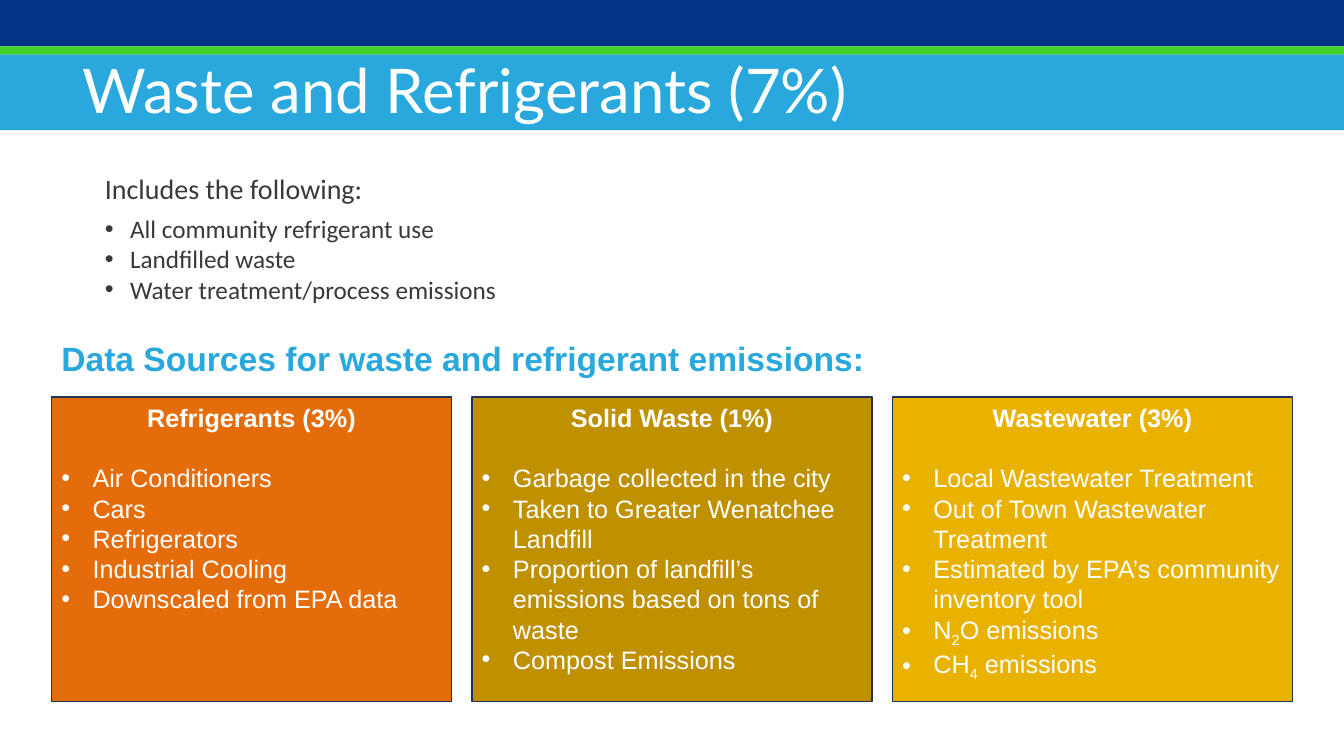
from lxml.etree import SubElement
from pptx import Presentation
from pptx.dml.color import RGBColor
from pptx.enum.shapes import MSO_SHAPE
from pptx.enum.text import MSO_ANCHOR, MSO_AUTO_SIZE, PP_ALIGN
from pptx.oxml.ns import qn
from pptx.util import Inches, Pt

COLORS = {
    "navy": "023586", "green": "3ED128", "blue": "28A8DD",
    "orange": "E46C0A", "bronze": "BF9000", "gold": "EAB200",
    "outline": "1E3256", "text": "3B3838", "white": "FFFFFF",
}

# Top, height and colour of each header band
BANDS = [(0.54, 0.75, "blue"), (0, 0.46, "navy"), (0.46, 0.08, "green")]

INCLUDED = ["All community refrigerant use", "Landfilled waste",
            "Water treatment/process emissions"]

# Underscores enclose subscripts
PANELS = [
    ("Refrigerants (3%)", "orange",
     ["Air Conditioners", "Cars", "Refrigerators", "Industrial Cooling",
      "Downscaled from EPA data"]),
    ("Solid Waste (1%)", "bronze",
     ["Garbage collected in the city",
      "Taken to Greater Wenatchee Landfill",
      "Proportion of landfill’s emissions based on tons of waste",
      "Compost Emissions"]),
    ("Wastewater (3%)", "gold",
     ["Local Wastewater Treatment", "Out of Town Wastewater Treatment",
      "Estimated by EPA’s community inventory tool",
      "N_2_O emissions", "CH_4_ emissions"]),
]
PANEL_LEFT, PANEL_TOP = 0.51, 3.94
PANEL_WIDTH, PANEL_HEIGHT, PANEL_PITCH = 3.97, 3.02, 4.17


def color(name):
    return RGBColor.from_string(COLORS[name])


def place(shape, left, top, width, height):
    shape.left, shape.top = Inches(left), Inches(top)
    shape.width, shape.height = Inches(width), Inches(height)


def format_runs(paragraph, font_name, size, color_name, bold=False):
    for run in paragraph.runs:
        run.font.name = font_name
        run.font.size = Pt(size)
        run.font.bold = bold
        run.font.color.rgb = color(color_name)


def set_bullet(paragraph, indent):
    """Give a hanging bullet, or none when the indent is zero."""
    properties = paragraph._p.get_or_add_pPr()
    properties.set("marL", str(Inches(indent)))
    properties.set("indent", str(-Inches(indent)))
    if indent:
        SubElement(properties, qn("a:buFont"), typeface="Arial")
        SubElement(properties, qn("a:buChar"), char="•")
    else:
        SubElement(properties, qn("a:buNone"))


def add_subscripted_text(paragraph, text):
    for index, part in enumerate(text.split("_")):
        run = paragraph.add_run()
        run.text = part
        if index % 2:
            run._r.get_or_add_rPr().set("baseline", "-25000")


def add_rectangle(slide, left, top, width, height, fill, line=None):
    shape = slide.shapes.add_shape(
        MSO_SHAPE.RECTANGLE, Inches(left), Inches(top),
        Inches(width), Inches(height))
    shape.shadow.inherit = False
    shape.fill.solid()
    shape.fill.fore_color.rgb = color(fill)
    if line:
        shape.line.color.rgb = color(line)
        shape.line.width = Pt(1)
    else:
        shape.line.fill.background()
    return shape


def add_panel(slide, left, heading, fill, items):
    panel = add_rectangle(slide, left, PANEL_TOP, PANEL_WIDTH, PANEL_HEIGHT,
                          fill, "outline")
    frame = panel.text_frame
    frame.word_wrap = True
    frame.vertical_anchor = MSO_ANCHOR.TOP
    paragraph = frame.paragraphs[0]
    paragraph.text = heading
    paragraph.alignment = PP_ALIGN.CENTER
    paragraph.space_after = Pt(21.6)
    format_runs(paragraph, "Arial", 18, "white", bold=True)
    for item in items:
        paragraph = frame.add_paragraph()
        paragraph.alignment = PP_ALIGN.LEFT
        add_subscripted_text(paragraph, item)
        set_bullet(paragraph, 0.31)
        format_runs(paragraph, "Arial", 18, "white")


def add_subheading(slide, text):
    box = slide.shapes.add_textbox(
        Inches(0.51), Inches(3.29), Inches(11.82), Inches(0.52))
    frame = box.text_frame
    frame.word_wrap = True
    frame.vertical_anchor = MSO_ANCHOR.MIDDLE
    frame.text = text
    format_runs(frame.paragraphs[0], "Arial", 24, "blue", bold=True)


def fill_included_list(body):
    place(body, 0.94, 1.65, 7.27, 1.51)
    frame = body.text_frame
    frame.auto_size = MSO_AUTO_SIZE.NONE
    frame.vertical_anchor = MSO_ANCHOR.TOP
    frame.text = "\n".join(["Includes the following:"] + INCLUDED)
    for index, paragraph in enumerate(frame.paragraphs):
        paragraph.space_before = Pt(0)
        paragraph.space_after = Pt(0 if index else 6)
        set_bullet(paragraph, 0.25 if index else 0)
        format_runs(paragraph, "Calibri", 18 if index else 20, "text")


def fill_title(slide, text):
    title = slide.shapes.title
    place(title, 0.72, 0.46, 12.04, 0.84)
    frame = title.text_frame
    frame.auto_size = MSO_AUTO_SIZE.NONE
    frame.vertical_anchor = MSO_ANCHOR.MIDDLE
    frame.text = text
    frame.paragraphs[0].alignment = PP_ALIGN.LEFT
    format_runs(frame.paragraphs[0], "Lato", 44, "white")
    # Bring the title in front of the bands
    slide.shapes.element.append(title.element)


def main():
    presentation = Presentation()
    presentation.slide_width = Inches(13.33)
    presentation.slide_height = Inches(7.5)
    slide = presentation.slides.add_slide(presentation.slide_layouts[1])

    # Data source panels
    for index, (heading, fill, items) in enumerate(PANELS):
        add_panel(slide, PANEL_LEFT + index * PANEL_PITCH, heading, fill, items)
    add_subheading(slide, "Data Sources for waste and refrigerant emissions:")

    # Included emissions
    fill_included_list(slide.placeholders[1])

    # Header
    for top, height, fill in BANDS:
        add_rectangle(slide, 0, top, 13.33, height, fill)
    fill_title(slide, "Waste and Refrigerants (7%)")

    presentation.save("out.pptx")


if __name__ == "__main__":
    main()
